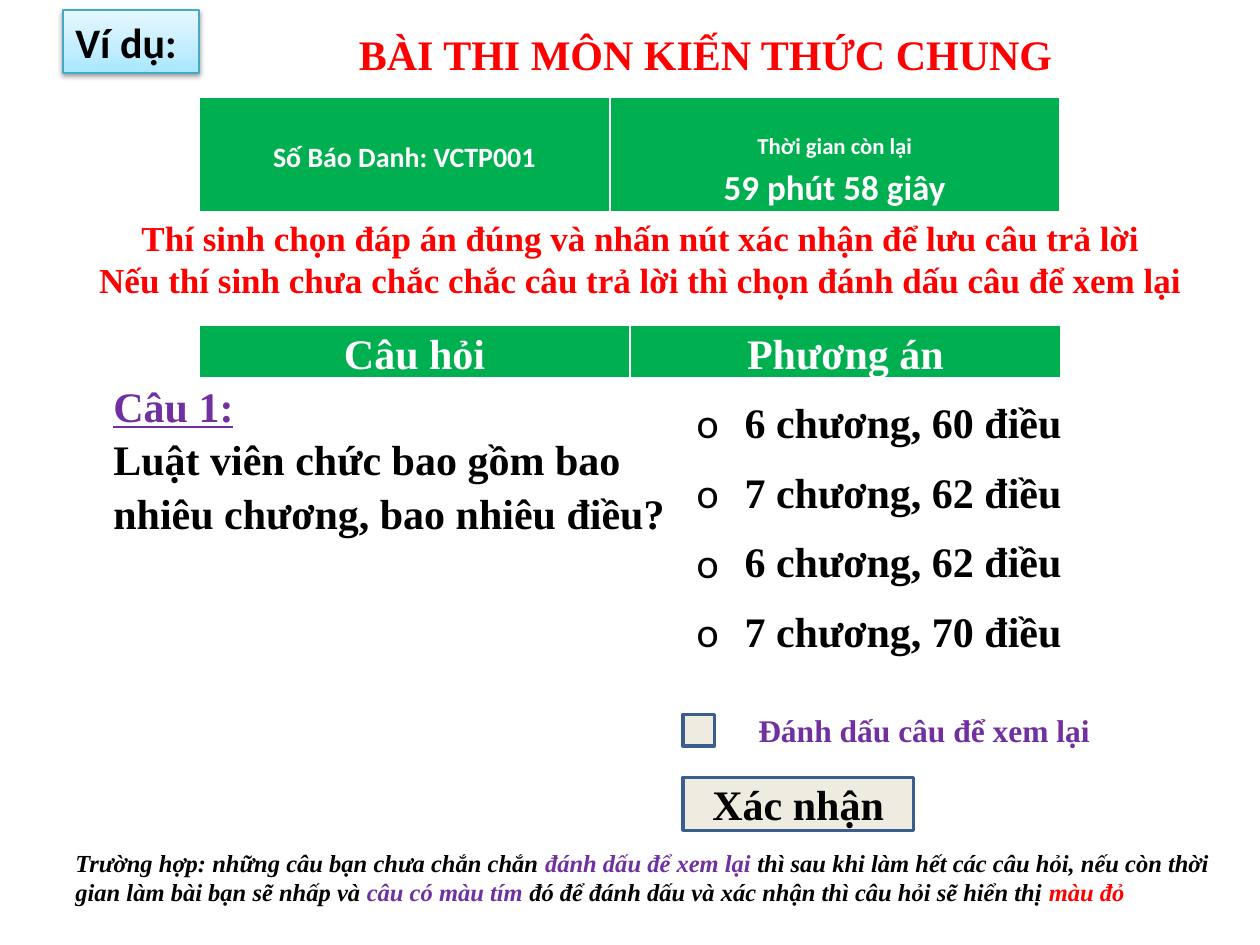
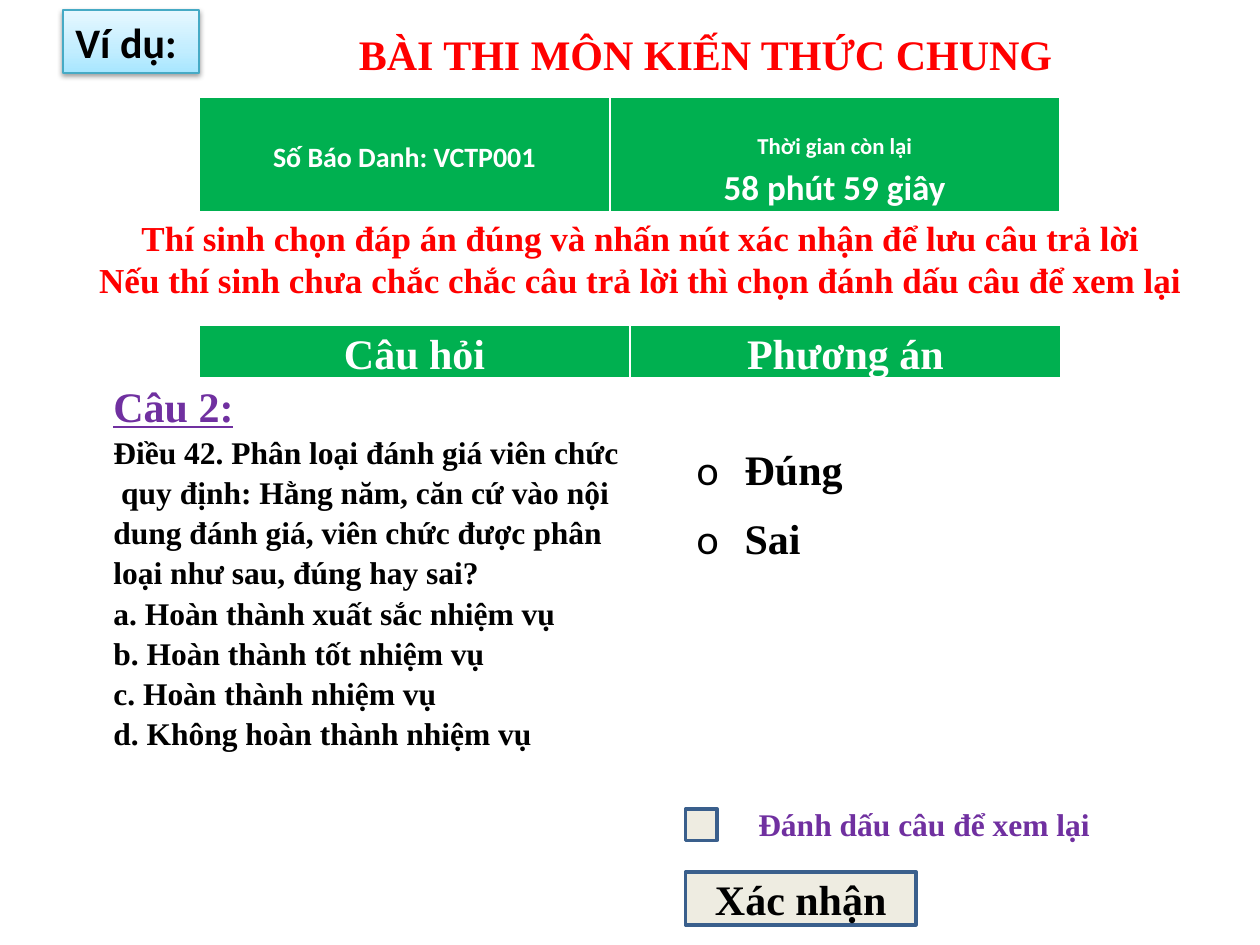
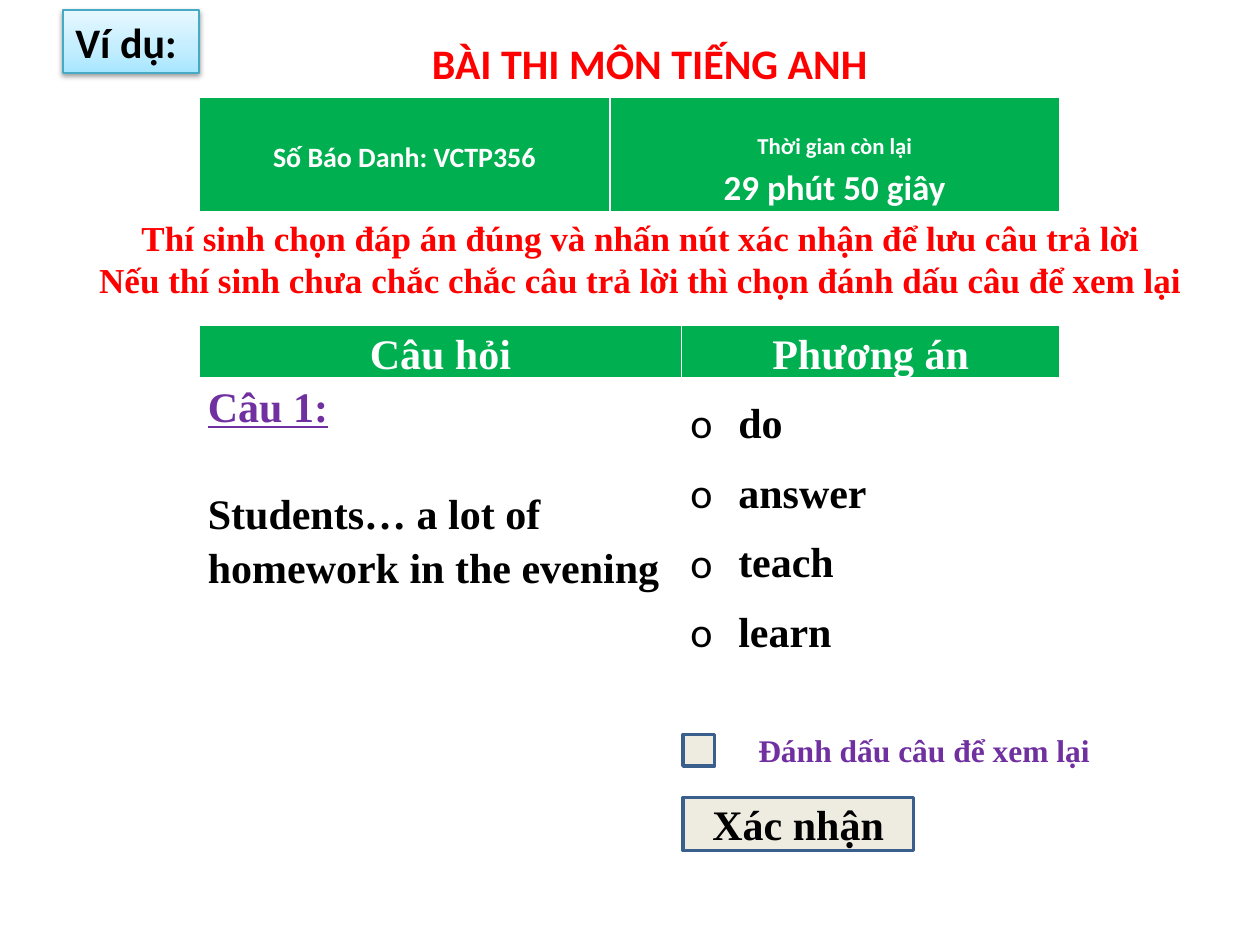
"""Builds three slides that show sample questions of an online exam."""
from dataclasses import dataclass

from pptx import Presentation, dml, oxml, util as u
from pptx.dml import color
from pptx.enum import shapes, text
from pptx.oxml import ns


@dataclass(frozen=True)
class Theme:
    """Holds the colours, fonts and type sizes."""
    red: str = "FF0000"
    green: str = "00B050"
    violet: str = "7030A0"
    black: str = "000000"
    white: str = "FFFFFF"
    cream: str = "EEECE1"
    navy: str = "3A5F8C"
    teal: str = "46AAC5"
    glow: tuple = ((0, "A7E6FF"), (35, "C1EDFF"), (100, "E7F8FF"))
    sans: str = "Calibri"
    serif: str = "Times New Roman"
    big: int = 24
    lead: int = 20
    mid: int = 18
    code: int = 16
    note: int = 14
    tiny: int = 13


T = Theme()
MID = text.PP_ALIGN.CENTER
LEFT = text.PP_ALIGN.LEFT


def rgb(code):
    """Turn a hex code into a colour."""
    return color.RGBColor.from_string(code)


def make(tag, **attrs):
    """Make a drawing element with its attributes."""
    node = oxml.parse_xml(f"<{tag} {ns.nsdecls('a')}/>")
    for key, val in attrs.items():
        node.set(key, str(val))
    return node


def nest(root, tag, **attrs):
    """Add a child element and return it."""
    node = make(tag, **attrs)
    root.append(node)
    return node


def run(words, size=T.big, tint=T.black, face=T.serif, under=False, slant=False):
    """Describe one run of text."""
    return words, size, tint, face, under, slant


def para(*runs, align=LEFT, space=None, gap=0, dot=False):
    """Describe one paragraph."""
    return runs, align, space, gap, dot


def write(frame, paras):
    """Write paragraphs into a text frame, run by run."""
    for i, (runs, align, space, gap, dot) in enumerate(paras):
        p = frame.paragraphs[0] if i == 0 else frame.add_paragraph()
        p.alignment = align
        if space:
            p.line_spacing = space
        if gap:
            p.space_before = u.Pt(gap)
        if dot:
            props = p._p.get_or_add_pPr()
            props.set("marL", str(u.Inches(0.38)))
            props.set("indent", str(u.Inches(-0.38)))
            nest(props, "a:buFont", typeface=T.sans)
            nest(props, "a:buChar", char="o")
        for words, size, tint, face, under, slant in runs:
            r = p.add_run()
            r.text = words
            r.font.size = u.Pt(size)
            r.font.name = face
            r.font.color.rgb = rgb(tint)
            r.font.bold = True
            r.font.italic = slant
            r.font.underline = under


def label(slide, at, *paras):
    """Add a text box that fits its text."""
    frame = slide.shapes.add_textbox(*map(u.Inches, at)).text_frame
    frame.word_wrap = True
    frame.auto_size = text.MSO_AUTO_SIZE.SHAPE_TO_FIT_TEXT
    write(frame, paras)


def box(slide, at, line, width, fill=None):
    """Add a plain rectangle."""
    form = slide.shapes.add_shape(shapes.MSO_SHAPE.RECTANGLE, *map(u.Inches, at))
    if fill:
        form.fill.solid()
        form.fill.fore_color.rgb = rgb(fill)
    form.line.color.rgb = rgb(line)
    form.line.width = u.Pt(width)
    form.shadow.inherit = False
    return form


def badge(slide):
    """Add the glowing example badge."""
    form = box(slide, (0.5, 0.08, 1.08, 0.5), T.teal, 0.75)
    props = form._element.spPr
    grad = make("a:gradFill", rotWithShape=1)
    stops = nest(grad, "a:gsLst")
    for pos, tint in T.glow:
        nest(nest(stops, "a:gs", pos=pos * 1000), "a:srgbClr", val=tint)
    nest(grad, "a:lin", ang=270 * 60000, scaled=1)
    props.insert(2, grad)
    shade = nest(props.find(ns.qn("a:effectLst")), "a:outerShdw", blurRad=u.Pt(3.1),
                 dist=u.Pt(1.6), dir=90 * 60000, rotWithShape=0)
    nest(nest(shade, "a:srgbClr", val=T.black), "a:alpha", val=38000)
    form.text_frame.vertical_anchor = text.MSO_ANCHOR.TOP
    write(form.text_frame, [para(run("Ví dụ:", face=T.sans))])


def edge(cell):
    """Draw the white borders of a cell."""
    props = cell._tc.get_or_add_tcPr()
    for i, (side, width) in enumerate((("L", 1), ("R", 1), ("T", 1), ("B", 3))):
        line = make(f"a:ln{side}", w=u.Pt(width))
        nest(nest(line, "a:solidFill"), "a:srgbClr", val=T.white)
        props.insert(i, line)


def grid(slide, left, top, high, cols, fill, cells):
    """Add a one-row table; each cell is a top margin and its paragraphs."""
    table = slide.shapes.add_table(1, len(cols), *map(u.Inches, (left, top, sum(cols), high))).table
    table.first_row = table.horz_banding = False
    table.rows[0].height = u.Inches(high)
    for i, (wide, (lead, paras)) in enumerate(zip(cols, cells)):
        table.columns[i].width = u.Inches(wide)
        cell = table.cell(0, i)
        cell.fill.solid()
        cell.fill.fore_color.rgb = rgb(fill)
        cell.margin_left = cell.margin_right = u.Inches(0.07)
        cell.margin_top, cell.margin_bottom = u.Inches(lead), 0
        edge(cell)
        write(cell.text_frame, paras)


def head(slide, code, time, cols):
    """Add the badge, candidate band, instructions and column heads."""
    def line(words, size, face=T.sans):
        return para(run(words, size, T.white, face), align=MID, space=1.15)

    badge(slide)
    grid(slide, 1.58, 0.77, 0.92, (3.26, 3.57), T.green, (
        (0.31, [line(f"Số Báo Danh: {code}", T.code)]),
        (0.25, [line("Thời gian còn lại", T.tiny), line(time, T.lead)])))
    label(slide, (0.67, 1.67, 8.83, 0.77), *(
        para(run(words, T.lead, T.red), align=MID) for words in (
            "Thí sinh chọn đáp án đúng và nhấn nút xác nhận để lưu câu trả lời",
            "Nếu thí sinh chưa chắc chắc câu trả lời thì chọn đánh dấu câu để xem lại")))
    grid(slide, 1.58, 2.58, 0.46, cols, T.green,
         [(0, [line(words, T.big, T.serif)]) for words in ("Câu hỏi", "Phương án")])


def quiz(slide, left, high, cols, name, lines, picks, size=T.big, gap=0, drop=0):
    """Add a question beside its answers."""
    ask = [para(run(name, tint=T.violet, under=True), space=1.15)]
    for i, words in enumerate(lines):
        ask.append(para(run(words, size), space=1.15, gap=0 if i else gap))
    answers = [para(run(words), space=1.5, dot=True) for words in picks]
    grid(slide, left, 3, high, cols, T.white, ((0, ask), (drop, answers)))


def confirm(slide, left, top):
    """Add the review tick box, its label and the confirm button."""
    box(slide, (left, top, 0.25, 0.25), T.navy, 2, T.cream)
    label(slide, (5.92, top - 0.08, 3.17, 0.4),
          para(run("Đánh dấu câu để xem lại", T.mid, T.violet)))
    form = box(slide, (left, top + 0.5, 1.83, 0.42), T.navy, 2, T.cream)
    form.text_frame.vertical_anchor = text.MSO_ANCHOR.MIDDLE
    write(form.text_frame, [para(run("Xác nhận"), align=MID)])


def hint(slide):
    """Add the note on marked questions."""
    parts = (
        ("Trường hợp: những câu bạn chưa chắn chắn ", T.black),
        ("đánh dấu để xem lại ", T.violet),
        ("thì sau khi làm hết các câu hỏi, nếu còn thời gian làm bài bạn sẽ nhấp và ", T.black),
        ("câu có màu tím ", T.violet),
        ("đó để đánh dấu và xác nhận thì câu hỏi sẽ hiển thị ", T.black),
        ("màu đỏ", T.red))
    label(slide, (0.5, 6.68, 9.43, 0.57),
          para(*(run(words, T.note, tint, slant=True) for words, tint in parts)))


def main():
    """Build and save the slides."""
    deck = Presentation()
    deck.slide_width, deck.slide_height = u.Inches(10), u.Inches(7.5)
    one, two, three = (deck.slides.add_slide(deck.slide_layouts[6]) for _ in range(3))
    even, wide, slim = (3.42, 3.42), (4.63, 3.62), (3.83, 3)

    for slide, time in ((one, "59 phút 58 giây"), (two, "58 phút 59 giây")):
        label(slide, (2.75, 0.18, 5.75, 0.5), para(run("BÀI THI MÔN KIẾN THỨC CHUNG", tint=T.red)))
        head(slide, "VCTP001", time, even)
    label(three, (3.33, 0.25, 3.92, 0.5),
          para(run("BÀI THI MÔN TIẾNG ANH", tint=T.red, face=T.sans)))
    head(three, "VCTP356", "29 phút 50 giây", slim)

    quiz(one, 0.83, 2.4, wide, "Câu 1:",
         ["Luật viên chức bao gồm bao nhiêu chương, bao nhiêu điều?"],
         ["6 chương, 60 điều", "7 chương, 62 điều", "6 chương, 62 điều", "7 chương, 70 điều"])
    confirm(one, 5.42, 5.67)
    hint(one)

    quiz(two, 0.83, 3.68, wide, "Câu 2:", [
        "Điều 42. Phân loại đánh giá viên chức",
        " quy định: Hằng năm, căn cứ vào nội dung đánh giá, viên chức được phân",
        "loại như sau, đúng hay sai?",
        "a. Hoàn thành xuất sắc nhiệm vụ",
        "b. Hoàn thành tốt nhiệm vụ",
        "c. Hoàn thành nhiệm vụ",
        "d. Không hoàn thành nhiệm vụ"], ["Đúng", "Sai"], size=T.mid, drop=0.37)
    confirm(two, 5.44, 6.42)

    quiz(three, 1.58, 2.4, slim, "Câu 1:", ["Students… a lot of homework in the evening"],
         ["do", "answer", "teach", "learn"], gap=31)
    confirm(three, 5.42, 5.83)

    deck.save("out.pptx")


if __name__ == "__main__":
    main()
